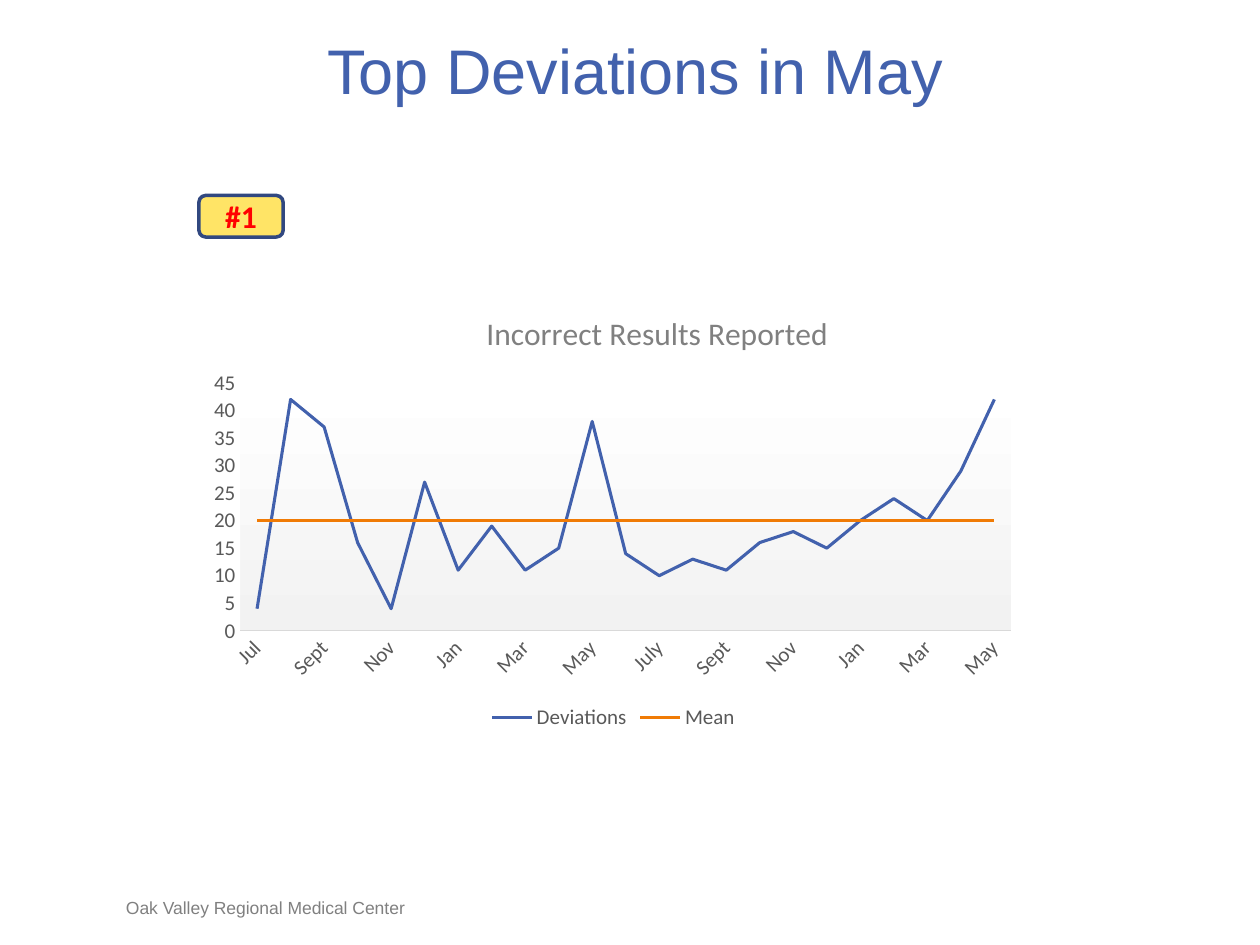
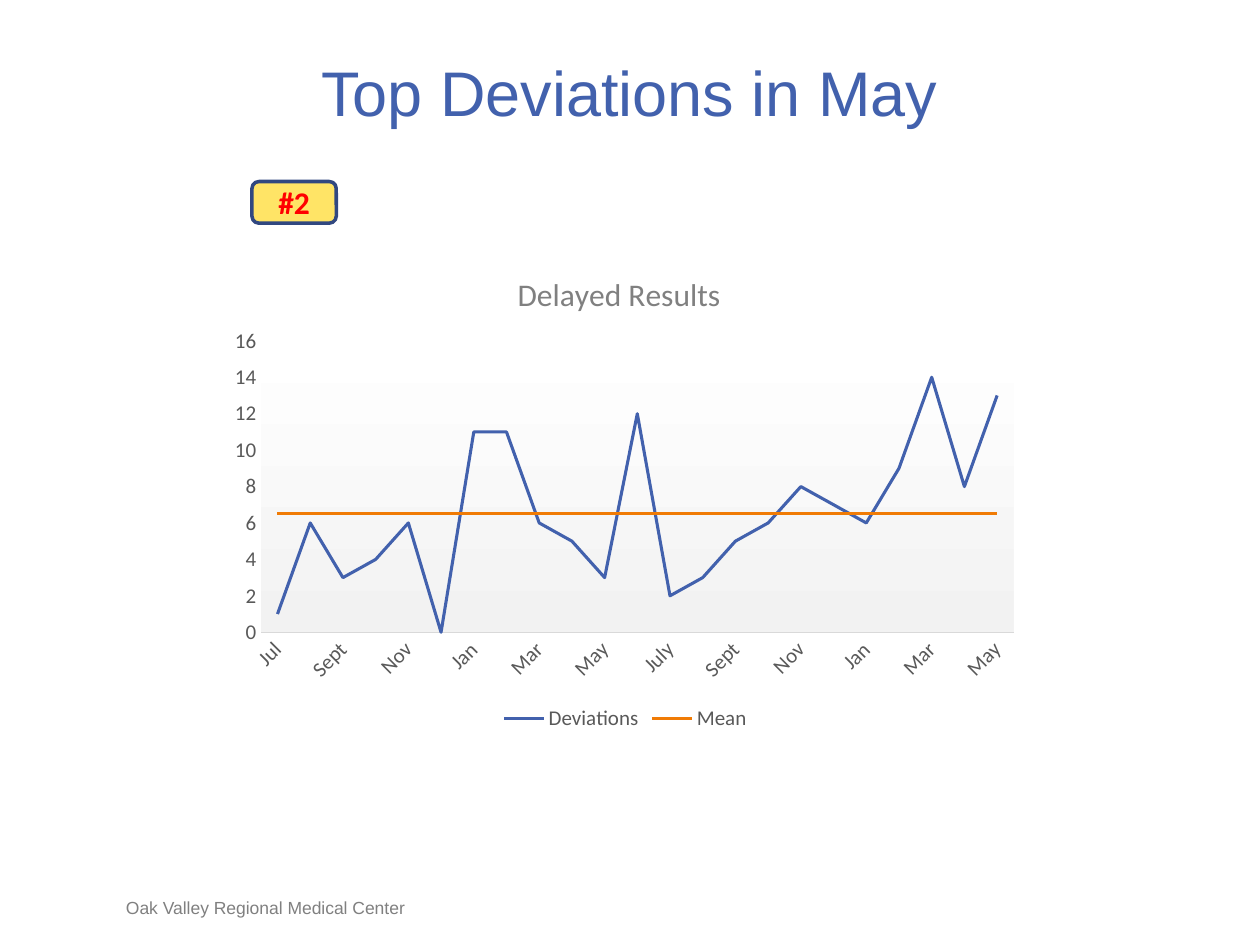
from dataclasses import dataclass

from lxml.etree import SubElement
from pptx import Presentation
from pptx.chart.data import CategoryChartData
from pptx.dml.color import RGBColor
from pptx.enum.chart import XL_CHART_TYPE, XL_LEGEND_POSITION, XL_TICK_MARK
from pptx.enum.shapes import MSO_SHAPE
from pptx.enum.text import MSO_ANCHOR, PP_ALIGN
from pptx.oxml import parse_xml
from pptx.oxml.ns import nsdecls, qn
from pptx.util import Cm, Pt

BLUE = RGBColor(0x42, 0x61, 0xAD)
NAVY = RGBColor(0x31, 0x48, 0x80)
ORANGE = RGBColor(0xF0, 0x7B, 0x05)
YELLOW = RGBColor(0xFF, 0xE4, 0x66)
RED = RGBColor(0xFF, 0x00, 0x00)
GRAY = RGBColor(0x80, 0x80, 0x80)
DARK_GRAY = RGBColor(0x59, 0x59, 0x59)
LIGHT_GRAY = RGBColor(0xD9, 0xD9, 0xD9)
PALE_GRAY = RGBColor(0xF2, 0xF2, 0xF2)
WHITE = RGBColor(0xFF, 0xFF, 0xFF)

TITLE = "Top Deviations in May"
FOOTER = "Oak Valley Regional Medical Center"
FOOTER_BOX = (2.54, 18.08, 8.05, 0.43)
BADGE_SIZE = (1.7, 0.84)
MONTHS = ("Jul Aug Sept Oct Nov Dec Jan Feb Mar Apr May June "
          "July Aug Sept Oct Nov Dec Jan Feb Mar April May").split()


@dataclass
class Deviation:
    rank: str
    name: str
    counts: list
    mean: float
    axis_max: int
    axis_step: int
    title_box: tuple
    badge_at: tuple
    chart_box: tuple
    name_at: tuple
    plot_box: tuple


DEVIATIONS = [
    Deviation("#1", "Incorrect Results Reported",
              [4, 42, 37, 16, 4, 27, 11, 19, 11, 15, 38, 14,
               10, 13, 11, 16, 18, 15, 20, 24, 20, 29, 42],
              20, 45, 5,
              title_box=(5.92, 0.64, 13.77, 1.55), badge_at=(4.01, 3.94),
              chart_box=(4.01, 5.72, 16.71, 9.09),
              name_at=(0.34, 0.05), plot_box=(0.05, 0.22, 0.93, 0.55)),
    Deviation("#2", "Delayed Results",
              [1, 6, 3, 4, 6, 0, 11, 11, 6, 5, 3, 12,
               2, 3, 5, 6, 8, 7, 6, 9, 14, 8, 13],
              6.5, 16, 2,
              title_box=(5.92, 1.07, 13.54, 3.07), badge_at=(5.08, 3.66),
              chart_box=(4.45, 4.88, 16.31, 9.96),
              name_at=(0.36, 0.05), plot_box=(0.05, 0.2, 0.93, 0.59)),
]


def to_cm(lengths):
    return [Cm(v) for v in lengths]


def format_font(font, size, color, name="Calibri", bold=False):
    font.size = Pt(size)
    font.name = name
    font.bold = bold
    font.color.rgb = color


def write_text(tf, text, *, size, color, name="Arial", bold=False,
               align=PP_ALIGN.LEFT, anchor=MSO_ANCHOR.TOP):
    tf.margin_left = tf.margin_top = tf.margin_right = tf.margin_bottom = 0
    tf.word_wrap = True
    tf.vertical_anchor = anchor
    p = tf.paragraphs[0]
    p.alignment = align
    r = p.add_run()
    r.text = text
    format_font(r.font, size, color, name, bold)


def set_layout(parent, index, **places):
    old = parent.find(qn("c:layout"))
    if old is not None:
        parent.remove(old)
    layout = parse_xml(f"<c:layout {nsdecls('c')}/>")
    manual = SubElement(layout, qn("c:manualLayout"))
    if "w" in places:
        SubElement(manual, qn("c:layoutTarget"), val="inner")
    for key in ("x", "y"):
        SubElement(manual, qn(f"c:{key}Mode"), val="edge")
    for key, value in places.items():
        SubElement(manual, qn(f"c:{key}"), val=str(value))
    parent.insert(index, layout)


def fill_properties(fill):
    return parse_xml(f"<c:spPr {nsdecls('c', 'a')}>{fill}"
                     "<a:ln><a:noFill/></a:ln></c:spPr>")


def fill_chart(chart):
    chart_el = chart._chartSpace.find(qn("c:chart"))
    chart_el.addnext(fill_properties(
        f'<a:solidFill><a:srgbClr val="{WHITE}"/></a:solidFill>'))
    stops = "".join(f'<a:gs pos="{pos}"><a:srgbClr val="{color}"/></a:gs>'
                    for pos, color in ((0, WHITE), (100000, PALE_GRAY)))
    chart_el.find(qn("c:plotArea")).append(fill_properties(
        f'<a:gradFill><a:gsLst>{stops}</a:gsLst>'
        '<a:lin ang="5400000" scaled="0"/></a:gradFill>'))


def format_axes(chart, deviation):
    for axis in (chart.category_axis, chart.value_axis):
        axis.major_tick_mark = axis.minor_tick_mark = XL_TICK_MARK.NONE
        axis.has_major_gridlines = False
        format_font(axis.tick_labels.font, 12, DARK_GRAY)
    months, counts = chart.category_axis, chart.value_axis
    months.format.line.color.rgb = LIGHT_GRAY
    months.format.line.width = Pt(0.75)
    months._element.find(qn("c:txPr")).find(qn("a:bodyPr")).set("rot", "-2700000")
    counts.format.line.fill.background()
    counts.minimum_scale = 0
    counts.maximum_scale = deviation.axis_max
    counts.major_unit = deviation.axis_step


def add_trend_chart(s, deviation):
    data = CategoryChartData()
    data.categories = MONTHS
    data.add_series("Deviations", deviation.counts)
    data.add_series("Mean", [deviation.mean] * len(MONTHS))
    chart = s.shapes.add_chart(XL_CHART_TYPE.LINE, *to_cm(deviation.chart_box),
                               data).chart
    chart.font.name = "Calibri"
    chart.font.size = Pt(10)

    chart.has_title = True
    title = chart.chart_title
    p = title.text_frame.paragraphs[0]
    r = p.add_run()
    r.text = deviation.name
    format_font(r.font, 18, GRAY)
    title.include_in_layout = False
    set_layout(title._element, 1, **dict(zip("xy", deviation.name_at)))

    chart.has_legend = True
    chart.legend.position = XL_LEGEND_POSITION.BOTTOM
    chart.legend.include_in_layout = False
    format_font(chart.legend.font, 12, DARK_GRAY)

    format_axes(chart, deviation)
    chart.plots[0].vary_by_categories = False
    for series, color in zip(chart.plots[0].series, (BLUE, ORANGE)):
        series.smooth = False
        series.format.line.color.rgb = color
        series.format.line.width = Pt(1.75)

    plot_area = chart._chartSpace.find(qn("c:chart")).find(qn("c:plotArea"))
    set_layout(plot_area, 0, **dict(zip("xywh", deviation.plot_box)))
    fill_chart(chart)


def add_title(s, box):
    sp = s.shapes.title
    sp.left, sp.top, sp.width, sp.height = to_cm(box)
    write_text(sp.text_frame, TITLE, size=36, color=BLUE, align=PP_ALIGN.CENTER)


def add_badge(s, at, rank):
    sp = s.shapes.add_shape(MSO_SHAPE.ROUNDED_RECTANGLE, *to_cm(at + BADGE_SIZE))
    sp.shadow.inherit = False
    sp.fill.solid()
    sp.fill.fore_color.rgb = YELLOW
    sp.line.color.rgb = NAVY
    sp.line.width = Pt(2)
    write_text(sp.text_frame, rank, size=18, color=RED, name="Calibri", bold=True,
               align=PP_ALIGN.CENTER, anchor=MSO_ANCHOR.MIDDLE)


def add_footer(s, box):
    sp = s.shapes.add_textbox(*to_cm(box))
    write_text(sp.text_frame, FOOTER, size=10, color=GRAY, anchor=MSO_ANCHOR.BOTTOM)


def add_deviation_slide(prs, deviation):
    s = prs.slides.add_slide(prs.slide_layouts[5])
    add_footer(s, FOOTER_BOX)
    add_title(s, deviation.title_box)
    add_badge(s, deviation.badge_at, deviation.rank)
    add_trend_chart(s, deviation)


def main():
    prs = Presentation()
    prs.slide_width, prs.slide_height = Cm(25.4), Cm(19.05)
    for deviation in DEVIATIONS:
        add_deviation_slide(prs, deviation)
    prs.save("out.pptx")


if __name__ == "__main__":
    main()
